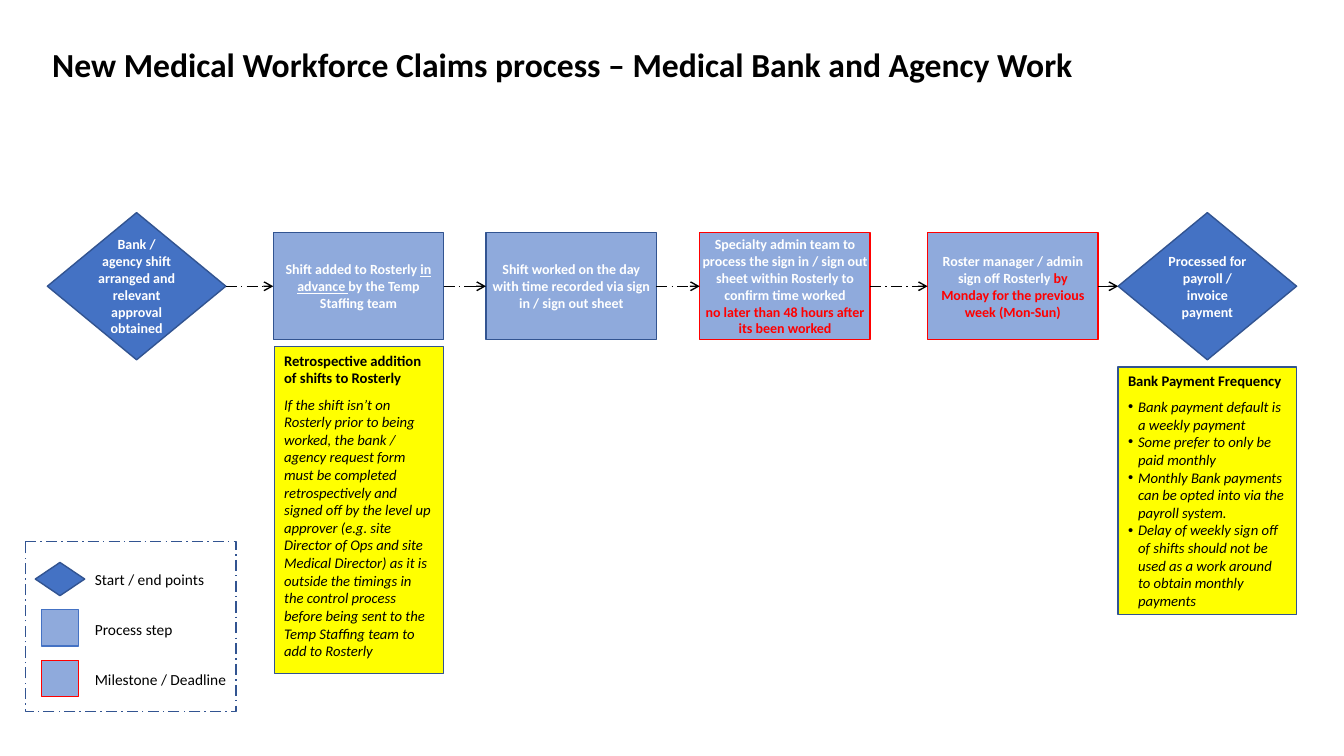
import pptx
import pptx.util
import pptx.dml.color
import pptx.enum.dml
import pptx.enum.shapes
import pptx.enum.text
from lxml import etree

RGBColor = pptx.dml.color.RGBColor
MSO_SHAPE = pptx.enum.shapes.MSO_SHAPE
ANCHOR = pptx.enum.text.MSO_ANCHOR
ALIGN = pptx.enum.text.PP_ALIGN
DASH = pptx.enum.dml.MSO_LINE.LONG_DASH_DOT

BLACK = RGBColor(0x00, 0x00, 0x00)
WHITE = RGBColor(0xFF, 0xFF, 0xFF)
RED = RGBColor(0xFF, 0x00, 0x00)
YELLOW = RGBColor(0xFF, 0xFF, 0x00)
BLUE = RGBColor(0x44, 0x72, 0xC4)
NAVY = RGBColor(0x32, 0x54, 0x91)
PALE = RGBColor(0x8F, 0xAA, 0xDC)

FONT = "Calibri"
NS = "http://schemas.openxmlformats.org/drawingml/2006/main"
EMU_PER_PX = 9144


def px(n):
    """Turn px into EMU, at 100 px to the inch."""
    return pptx.util.Emu(n * EMU_PER_PX)


def add_a(parent, tag, **attrs):
    """Append a DrawingML element to a parent."""
    return etree.SubElement(parent, f"{{{NS}}}{tag}", attrs)


def add_run(p, text, size, color=BLACK, bold=False, italic=False, underline=False):
    """Add one styled run to a paragraph."""
    r = p.add_run()
    r.text = text
    r.font.name = FONT
    r.font.size = pptx.util.Pt(size)
    r.font.color.rgb = color
    r.font.bold = bold
    r.font.italic = italic
    r.font.underline = underline


def set_frame(sp, anchor, side=10):
    """Set wrapping, anchor and side margins, and return the text frame."""
    tf = sp.text_frame
    tf.word_wrap = True
    tf.vertical_anchor = anchor
    tf.margin_left = tf.margin_right = px(side)
    tf.margin_top = tf.margin_bottom = px(5)
    return tf


def add_box(s, kind, box, fill=None, line=None):
    """Add a flat shape with an optional fill and outline."""
    sp = s.shapes.add_shape(kind, *map(px, box))
    sp.shadow.inherit = False
    if fill is None:
        sp.fill.background()
    else:
        sp.fill.solid()
        sp.fill.fore_color.rgb = fill
    if line is None:
        sp.line.fill.background()
    else:
        sp.line.color.rgb = line
        sp.line.width = pptx.util.Pt(1)
    return sp


def add_title(s, box, text):
    """Add the slide title."""
    sp = s.shapes.add_textbox(*map(px, box))
    tf = set_frame(sp, ANCHOR.TOP)
    add_run(tf.paragraphs[0], text, 24, bold=True)


def add_step(s, kind, box, fill, line, side, paragraphs):
    """Add one flow step from paragraphs of (text, color, underline) runs."""
    sp = add_box(s, kind, box, fill, line)
    tf = set_frame(sp, ANCHOR.MIDDLE, side)
    for i, runs in enumerate(paragraphs):
        p = tf.add_paragraph() if i else tf.paragraphs[0]
        p.alignment = ALIGN.CENTER
        for text, color, underline in runs:
            add_run(p, text, 10, color, bold=True, underline=underline)


def add_arrow(s, x1, x2, y):
    """Add a dashed arrow between two steps."""
    c = s.shapes.add_connector(pptx.enum.shapes.MSO_CONNECTOR.STRAIGHT,
                               px(x1), px(y), px(x2), px(y))
    c.line.color.rgb = BLACK
    c.line.width = pptx.util.Pt(1)
    c.line.dash_style = DASH
    add_a(c.line._get_or_add_ln(), "tailEnd", type="arrow")
    add_a(c._element.spPr, "effectLst")


def add_flow(s, box):
    """Add the row of steps, joined by arrows along its middle."""
    left, top, width, height = box
    middle = top + height // 2
    end_w, step_w, step_h = 177, 169, 106
    decision, process = MSO_SHAPE.FLOWCHART_DECISION, MSO_SHAPE.FLOWCHART_PROCESS
    steps = [
        (0, decision, NAVY, 4,
         [[("Bank / agency shift arranged and relevant approval obtained", WHITE, False)]]),
        (224, process, NAVY, 4,
         [[("Shift added to Rosterly ", WHITE, False), ("in advance ", WHITE, True),
           ("by the Temp Staffing team", WHITE, False)]]),
        (435, process, NAVY, 4,
         [[("Shift worked on the day with time recorded via sign in / sign out sheet",
            WHITE, False)]]),
        (647, process, RED, 0,
         [[("Specialty admin team to process the sign in / sign out sheet within "
            "Rosterly to confirm time worked", WHITE, False)],
          [("no later than 48 hours after its been worked", RED, False)]]),
        (873, process, RED, 10,
         [[("Roster manager / admin sign off Rosterly ", WHITE, False),
           ("by Monday for the previous week (Mon-Sun)", RED, False)]]),
        (width - end_w, MSO_SHAPE.DIAMOND, NAVY, 4,
         [[("Processed for payroll / invoice payment", WHITE, False)]]),
    ]
    previous_right = None
    for offset, kind, line, side, paragraphs in steps:
        is_step = kind == process
        w, h = (step_w, step_h) if is_step else (end_w, height)
        x = left + offset
        add_step(s, kind, (x, middle - h // 2, w, h), PALE if is_step else BLUE,
                 line, side, paragraphs)
        if previous_right is not None:
            add_arrow(s, previous_right, x, middle)
        previous_right = x + w


def add_note(s, box, heading, paragraphs, bulleted=False):
    """Add a yellow note with a bold heading and italic paragraphs."""
    sp = add_box(s, MSO_SHAPE.RECTANGLE, box, YELLOW, NAVY)
    tf = set_frame(sp, ANCHOR.TOP)
    p = tf.paragraphs[0]
    p.alignment = ALIGN.LEFT
    p.space_after = pptx.util.Pt(6)
    add_run(p, heading, 10.5, bold=True)
    for text in paragraphs:
        p = tf.add_paragraph()
        p.alignment = ALIGN.LEFT
        if bulleted:
            pPr = p._p.get_or_add_pPr()
            pPr.set("marL", str(px(10)))
            pPr.set("indent", str(px(-10)))
            add_a(pPr, "buFont", typeface="Arial")
            add_a(pPr, "buChar", char="•")
        add_run(p, text, 10.5, italic=True)


def add_legend(s, box):
    """Add the dashed legend with one key per row."""
    left, top, width, height = box
    frame = add_box(s, MSO_SHAPE.FLOWCHART_PROCESS, box, line=NAVY)
    frame.line.dash_style = DASH
    keys = [
        ("Start / end points", MSO_SHAPE.FLOWCHART_DECISION, BLUE, NAVY, 49, 33),
        ("Process step", MSO_SHAPE.FLOWCHART_PROCESS, PALE, BLUE, 37, 36),
        ("Milestone / Deadline", MSO_SHAPE.FLOWCHART_PROCESS, PALE, RED, 37, 36),
    ]
    for i, (text, kind, fill, line, w, h) in enumerate(keys):
        y = top + 37 + 99 * i // 2
        add_box(s, kind, (left + 34 - w // 2, y - h // 2, w, h), fill, line)
        sp = add_box(s, MSO_SHAPE.RECTANGLE, (left + 65, y - 13, width - 67, 29), WHITE)
        tf = set_frame(sp, ANCHOR.TOP, 4)
        tf.paragraphs[0].alignment = ALIGN.LEFT
        add_run(tf.paragraphs[0], text, 11)


def main():
    """Build the slide and save it."""
    prs = pptx.Presentation()
    prs.slide_width, prs.slide_height = px(1333), px(750)
    s = prs.slides.add_slide(prs.slide_layouts[6])
    add_title(s, (42, 39, 1076, 89),
              "New Medical Workforce Claims process – Medical Bank and Agency Work")
    add_flow(s, (47, 211, 1239, 146))
    add_note(s, (272, 344, 168, 324), "Retrospective addition of shifts to Rosterly", [
        "If the shift isn’t on Rosterly prior to being worked, the bank / agency request "
        "form must be completed retrospectively and signed off by the level up approver "
        "(e.g. site Director of Ops and site Medical Director) as it is outside the "
        "timings in the control process before being sent to the Temp Staffing team to "
        "add to Rosterly"])
    add_note(s, (1109, 364, 177, 246), "Bank Payment Frequency", [
        "Bank payment default is a weekly payment",
        "Some prefer to only be paid monthly",
        "Monthly Bank payments can be opted into via the payroll system.",
        "Delay of weekly sign off of shifts should not be used as a work around to "
        "obtain monthly payments"], bulleted=True)
    add_legend(s, (25, 537, 209, 169))
    prs.save("out.pptx")


if __name__ == "__main__":
    main()
